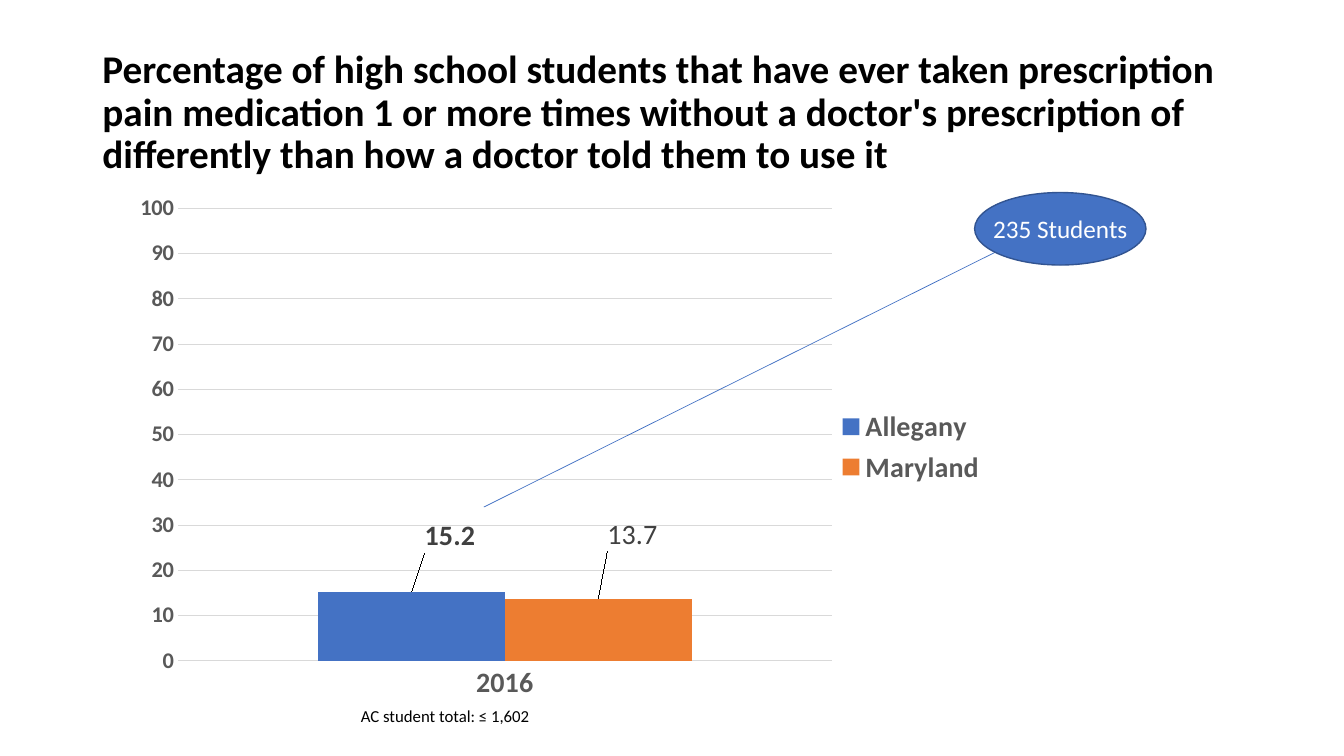
from lxml import etree
from pptx import Presentation
from pptx.chart.data import CategoryChartData
from pptx.dml.color import RGBColor
from pptx.enum.chart import XL_CHART_TYPE, XL_LABEL_POSITION, XL_LEGEND_POSITION, XL_TICK_MARK
from pptx.enum.shapes import MSO_CONNECTOR, MSO_SHAPE
from pptx.enum.text import MSO_ANCHOR, MSO_AUTO_SIZE, PP_ALIGN
from pptx.oxml.ns import qn
from pptx.util import Pt

CLUSTERED = XL_CHART_TYPE.COLUMN_CLUSTERED
OUTSIDE_END = XL_LABEL_POSITION.OUTSIDE_END
LEGEND_RIGHT = XL_LEGEND_POSITION.RIGHT
NO_TICK = XL_TICK_MARK.NONE
STRAIGHT = MSO_CONNECTOR.STRAIGHT
OVAL = MSO_SHAPE.OVAL
MIDDLE, TOP = MSO_ANCHOR.MIDDLE, MSO_ANCHOR.TOP
NO_FIT = MSO_AUTO_SIZE.NONE
LEFT, CENTER = PP_ALIGN.LEFT, PP_ALIGN.CENTER

# Content
TITLE = ("Percentage of high school students that have ever taken prescription "
         "pain medication 1 or more times without a doctor's prescription of "
         "differently than how a doctor told them to use it")
CALLOUT = "235 Students"
FOOTNOTE = "AC student total: ≤ 1,602"
YEARS = ["2016"]
# name, values, colour, label bold, label shift as a share of the chart
SERIES = [
    ("Allegany", [15.2], "blue", True, (0.044, -0.065)),
    ("Maryland", [13.7], "orange", False, (0.039, -0.08)),
]
FONT = "Calibri"
COLORS = {"black": "000000", "white": "FFFFFF", "blue": "4472C4", "navy": "325491",
          "orange": "ED7D31", "grid": "D9D9D9", "axis": "595959", "label": "404040"}

# Places in points: left, top, width, height
TITLE_AREA = (66, 28.8, 828, 104.4)
CHART_AREA = (85, 127.4, 627, 383.8)
PLOT_AREA = {"x": 0.067, "y": 0.056, "w": 0.745, "h": 0.842}
OVAL_AREA = (696.2, 137.5, 122.4, 51.8)
FOOTNOTE_AREA = (250.6, 500.4, 138.2, 21.6)
LEADER = (345.6, 362.2, 715.7, 177.8)
CALLOUT_HEIGHT = 28.8


def color(name):
    return RGBColor.from_string(COLORS[name])


def points(lengths):
    return [Pt(length) for length in lengths]


def style_font(font, size, shade, bold=False):
    font.name, font.size, font.bold = FONT, Pt(size), bold
    font.color.rgb = color(shade)


def write(box, text, size=12, shade="black", bold=False, align=LEFT, anchor=TOP, spacing=1.0):
    frame = box.text_frame
    frame.word_wrap = True
    frame.auto_size = NO_FIT
    frame.vertical_anchor = anchor
    para = frame.paragraphs[0]
    para.alignment, para.line_spacing = align, spacing
    span = para.add_run()
    span.text = text
    style_font(span.font, size, shade, bold)


def manual_layout(**settings):
    layout = etree.Element(qn("c:layout"))
    manual = etree.SubElement(layout, qn("c:manualLayout"))
    for tag, value in settings.items():
        etree.SubElement(manual, qn(f"c:{tag}")).set("val", str(value))
    return layout


deck = Presentation()
deck.slide_width, deck.slide_height = Pt(960), Pt(540)
page = deck.slides.add_slide(deck.slide_layouts[5])
shapes = page.shapes

# Title
title = shapes.title
title.left, title.top, title.width, title.height = points(TITLE_AREA)
write(title, TITLE, size=28, bold=True, anchor=MIDDLE, spacing=0.9)

# Column chart
data = CategoryChartData()
data.categories = YEARS
for name, values, *_ in SERIES:
    data.add_series(name, values)
chart = shapes.add_chart(CLUSTERED, *points(CHART_AREA), data).chart
chart.has_title = False
style_font(chart.font, 10, "black")

plot = chart.plots[0]
plot.gap_width, plot.overlap, plot.vary_by_categories = 150, 0, False
plot_area = chart.element.find(".//" + qn("c:plotArea"))
for old_layout in plot_area.findall(qn("c:layout")):
    plot_area.remove(old_layout)
plot_area.insert(0, manual_layout(layoutTarget="inner", xMode="edge", yMode="edge", **PLOT_AREA))

for axis, size in ((chart.category_axis, 20), (chart.value_axis, 16)):
    axis.major_tick_mark = axis.minor_tick_mark = NO_TICK
    axis.format.line.fill.background()
    style_font(axis.tick_labels.font, size, "axis", bold=True)
value_axis = chart.value_axis
value_axis.minimum_scale, value_axis.maximum_scale, value_axis.major_unit = 0, 100, 10
grid_line = value_axis.major_gridlines.format.line
grid_line.color.rgb, grid_line.width = color("grid"), Pt(0.75)

chart.has_legend = True
chart.legend.position, chart.legend.include_in_layout = LEGEND_RIGHT, False
style_font(chart.legend.font, 20, "axis", bold=True)

# Columns and their shifted value labels
for series, (_, _, shade, bold, (shift_x, shift_y)) in zip(plot.series, SERIES):
    series.format.fill.solid()
    series.format.fill.fore_color.rgb = color(shade)
    series.invert_if_negative = False
    label = series.points[0].data_label
    style_font(label.font, 20, "label", bold)
    label.position = OUTSIDE_END
    index = series.data_labels._element.find(qn("c:dLbl")).find(qn("c:idx"))
    index.addnext(manual_layout(x=shift_x, y=shift_y))
    style_font(series.data_labels.font, 20, "label", bold)
    series.data_labels.show_value = True

# Callout: leader line, oval and text
leader = shapes.add_connector(STRAIGHT, *points(LEADER))
leader.line.color.rgb, leader.line.width = color("blue"), Pt(0.5)
etree.SubElement(leader._element.spPr, qn("a:effectLst"))

oval = shapes.add_shape(OVAL, *points(OVAL_AREA))
oval.shadow.inherit = False
oval.fill.solid()
oval.fill.fore_color.rgb = color("blue")
oval.line.color.rgb, oval.line.width = color("navy"), Pt(1)

left, top, width, height = OVAL_AREA
callout_area = (left, top + (height - CALLOUT_HEIGHT) / 2, width, CALLOUT_HEIGHT)
write(shapes.add_textbox(*points(callout_area)), CALLOUT, size=18, shade="white", align=CENTER)

# Footnote
write(shapes.add_textbox(*points(FOOTNOTE_AREA)), FOOTNOTE)

deck.save("out.pptx")
